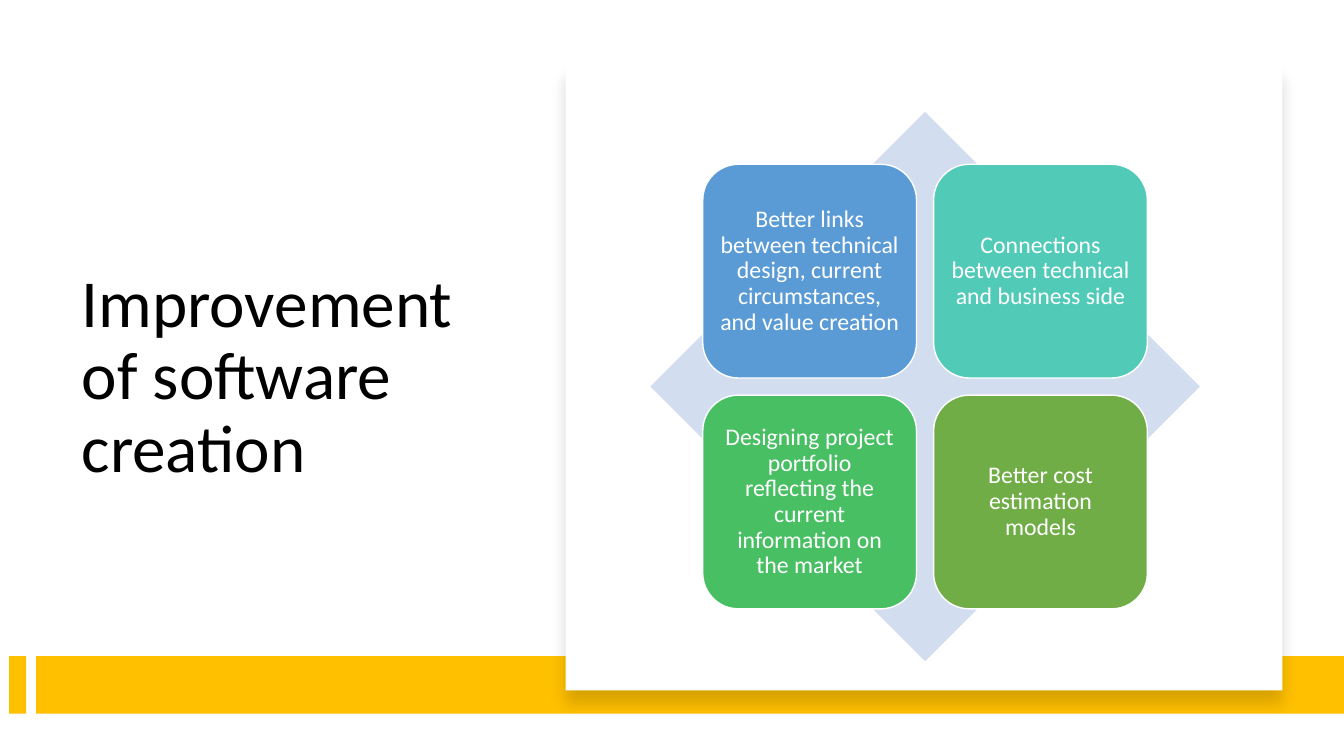
from dataclasses import dataclass

from lxml import etree
from pptx import Presentation
from pptx.dml.color import RGBColor
from pptx.enum import shapes, text
from pptx.oxml import ns
from pptx.util import Inches, Pt


@dataclass(frozen=True)
class Theme:
    font: str = "Calibri"
    title_size: int = 48
    tile_size: int = 17
    ink: str = "000000"
    paper: str = "FFFFFF"
    accent: str = "FFC000"
    diamond: str = "D2DEEF"


THEME = Theme()
SHAPE = shapes.MSO_SHAPE

TILES = [
    ("Better links between technical design, current circumstances, and value creation", "5B9BD5"),
    ("Connections between technical and business side", "52CAB8"),
    ("Designing project portfolio reflecting the current information on the market", "49BF64"),
    ("Better cost estimation models", "70AD47"),
]


def add_block(slide, kind, box, fill):
    """Add a filled shape without outline or shadow."""
    shape = slide.shapes.add_shape(kind, *(Inches(length) for length in box))
    shape.shadow.inherit = False
    shape.fill.solid()
    shape.fill.fore_color.rgb = RGBColor.from_string(fill)
    shape.line.fill.background()
    return shape


def write_text(shape, wording, size, color, alignment):
    frame = shape.text_frame
    frame.text = wording
    frame.word_wrap = True
    frame.auto_size = text.MSO_AUTO_SIZE.NONE
    frame.vertical_anchor = text.MSO_ANCHOR.MIDDLE
    paragraph = frame.paragraphs[0]
    paragraph.alignment = alignment
    paragraph.line_spacing = 0.9
    font = paragraph.runs[0].font
    font.name = THEME.font
    font.size = Pt(size)
    font.color.rgb = RGBColor.from_string(color)


def add_title(slide, box):
    title = slide.shapes.title
    title.left, title.top, title.width, title.height = (Inches(length) for length in box)
    write_text(title, "Improvement of software creation",
               THEME.title_size, THEME.ink, text.PP_ALIGN.LEFT)


def add_accent_bar(slide, box):
    """Short block, gap, then a long bar to the right end of the box."""
    left, top, width, height = box
    block, gap = 0.17, 0.1
    offset = block + gap
    add_block(slide, SHAPE.RECTANGLE, (left, top, block, height), THEME.accent)
    add_block(slide, SHAPE.RECTANGLE, (left + offset, top, width - offset, height), THEME.accent)


def add_card(slide, box):
    card = add_block(slide, SHAPE.RECTANGLE, box, THEME.paper)
    # Soft shadow falling straight down
    effects = card._element.spPr.find(ns.qn("a:effectLst"))
    shadow = etree.SubElement(effects, ns.qn("a:outerShdw"), blurRad=str(Pt(11)),
                              dist=str(Pt(10)), dir="5400000", algn="t", rotWithShape="0")
    color = etree.SubElement(shadow, ns.qn("a:srgbClr"), val=THEME.ink)
    etree.SubElement(color, ns.qn("a:alpha"), val="15000")


def add_matrix(slide, box):
    """Diamond filling the box, with a centred two by two grid of tiles."""
    left, top, width, height = box
    add_block(slide, SHAPE.DIAMOND, box, THEME.diamond)
    size, pitch = 2.12, 2.29
    margin_x = (width - size - pitch) / 2
    margin_y = (height - size - pitch) / 2
    for index, (wording, fill) in enumerate(TILES):
        row, column = divmod(index, 2)
        tile = add_block(slide, SHAPE.ROUNDED_RECTANGLE,
                         (left + margin_x + column * pitch,
                          top + margin_y + row * pitch, size, size), fill)
        tile.line.color.rgb = RGBColor.from_string(THEME.paper)
        tile.line.width = Pt(1)
        frame = tile.text_frame
        frame.margin_left = frame.margin_right = Inches(0.07)
        frame.margin_top = frame.margin_bottom = Inches(0.07)
        write_text(tile, wording, THEME.tile_size, THEME.paper, text.PP_ALIGN.CENTER)


def main():
    presentation = Presentation()
    presentation.slide_width = Inches(13.33)
    presentation.slide_height = Inches(7.5)
    slide = presentation.slides.add_slide(presentation.slide_layouts[5])

    # Left side and footer band
    add_title(slide, (0.71, 1.2, 4.15, 5.1))
    add_accent_bar(slide, (0.09, 6.51, 13.24, 0.57))

    # Card with the four improvements
    add_card(slide, (5.61, 0.64, 7.11, 6.21))
    add_matrix(slide, (6.45, 1.11, 5.45, 5.45))

    presentation.save("out.pptx")


if __name__ == "__main__":
    main()
